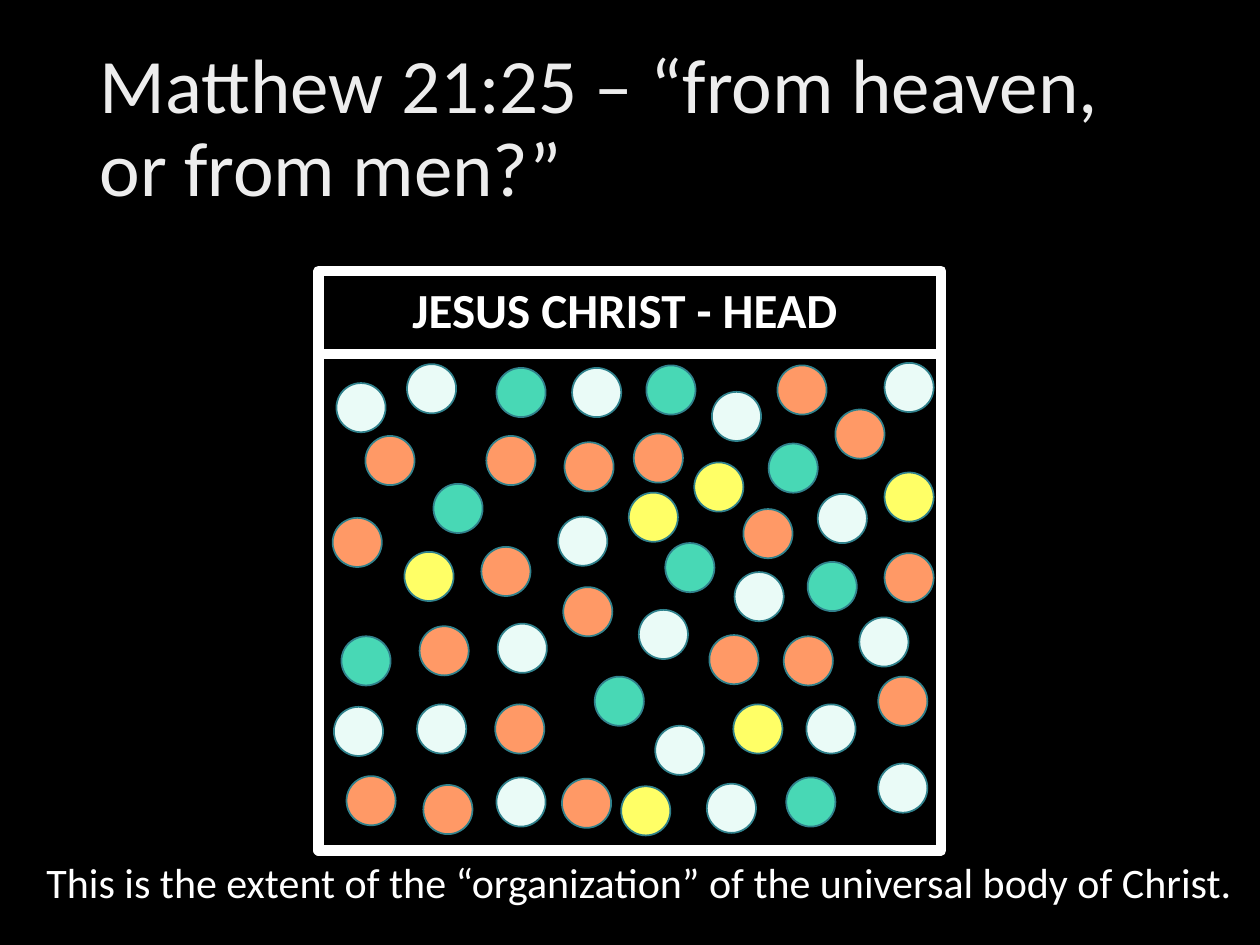
from pptx import Presentation
from pptx.dml.color import RGBColor
from pptx.enum import shapes, text
from pptx.util import Inches, Pt

COLORS = {
    "black": "000000", "white": "FFFFFF", "title": "EDEDED", "outline": "30818C",
    "pale": "EAFBF7", "green": "48D8B5", "yellow": "FFFF66", "orange": "FF9966",
}
MEMBER_SIZE = 0.39
MEMBERS = {
    "pale": [
        (2.67, 3.04), (4.54, 2.92), (5.83, 4.54), (5.65, 3.11), (6.49, 3.92),
        (7.02, 2.88), (4.43, 4.1), (5.07, 4.84), (5.2, 5.76), (5.61, 6.22),
        (6.97, 6.06), (6.4, 5.59), (6.82, 4.9), (3.23, 2.89), (3.95, 4.95),
        (3.31, 5.59), (3.94, 6.17), (2.65, 5.61),
    ],
    "green": [
        (5.28, 4.31), (6.41, 4.46), (5.13, 2.9), (6.1, 3.52), (3.94, 2.92),
        (4.72, 5.37), (6.24, 6.17), (3.44, 3.84), (2.71, 5.05),
    ],
    "yellow": [
        (4.99, 3.91), (5.51, 3.67), (7.02, 3.75), (5.82, 5.59), (4.93, 6.24),
        (3.21, 4.38),
    ],
    "orange": [
        (7.02, 4.39), (5.9, 4.04), (5.03, 3.44), (6.17, 2.9), (6.63, 3.25),
        (3.86, 3.46), (4.47, 4.66), (4.48, 3.51), (5.63, 5.04), (6.22, 5.05),
        (6.97, 5.37), (2.9, 3.46), (3.82, 4.34), (2.64, 4.11), (3.33, 4.97),
        (3.93, 5.59), (4.46, 6.18), (3.36, 6.23), (2.75, 6.16),
    ],
}


def add_outlined(preset, left, top, width, height, line, weight, fill=None):
    outlined = slide.shapes.add_shape(
        preset, Inches(left), Inches(top), Inches(width), Inches(height))
    outlined.shadow.inherit = False
    outlined.line.color.rgb = RGBColor.from_string(COLORS[line])
    outlined.line.width = Pt(weight)
    if fill:
        outlined.fill.solid()
        outlined.fill.fore_color.rgb = RGBColor.from_string(COLORS[fill])
    else:
        outlined.fill.background()


def set_text(frame, wording, size, color, align, bold=False):
    frame.word_wrap = True
    frame.text = wording
    paragraph = frame.paragraphs[0]
    paragraph.alignment = align
    paragraph.font.name = "Calibri"
    paragraph.font.size = Pt(size)
    paragraph.font.bold = bold
    paragraph.font.color.rgb = RGBColor.from_string(COLORS[color])


prs = Presentation()
prs.slide_width = Inches(10)
prs.slide_height = Inches(7.5)
slide = prs.slides.add_slide(prs.slide_layouts[5])
slide.background.fill.solid()
slide.background.fill.fore_color.rgb = RGBColor.from_string(COLORS["black"])

title = slide.shapes.title
title.left, title.top = Inches(0.69), Inches(0.22)
title.width, title.height = Inches(8.62), Inches(1.63)
set_text(title.text_frame, "Matthew 21:25 – “from heaven, or from men?”",
         44, "title", text.PP_ALIGN.LEFT)
title.text_frame.vertical_anchor = text.MSO_ANCHOR.MIDDLE
title.text_frame.paragraphs[0].line_spacing = 0.9

add_outlined(shapes.MSO_SHAPE.RECTANGLE, 2.53, 2.81, 4.94, 3.94, "white", 6)
for color, spots in MEMBERS.items():
    for left, top in spots:
        add_outlined(shapes.MSO_SHAPE.OVAL, left, top, MEMBER_SIZE, MEMBER_SIZE,
                     "outline", 1, color)
add_outlined(shapes.MSO_SHAPE.RECTANGLE, 2.53, 2.15, 4.94, 0.66, "white", 6)

head = slide.shapes.add_textbox(Inches(2.71), Inches(2.17), Inches(4.5), Inches(0.57))
set_text(head.text_frame, "JESUS CHRIST - HEAD", 28, "white",
         text.PP_ALIGN.CENTER, bold=True)

caption = slide.shapes.add_textbox(Inches(0.27), Inches(6.75), Inches(10.23), Inches(0.5))
set_text(caption.text_frame,
         "This is the extent of the “organization” of the universal body of Christ.",
         24, "white", text.PP_ALIGN.LEFT)

prs.save("out.pptx")
